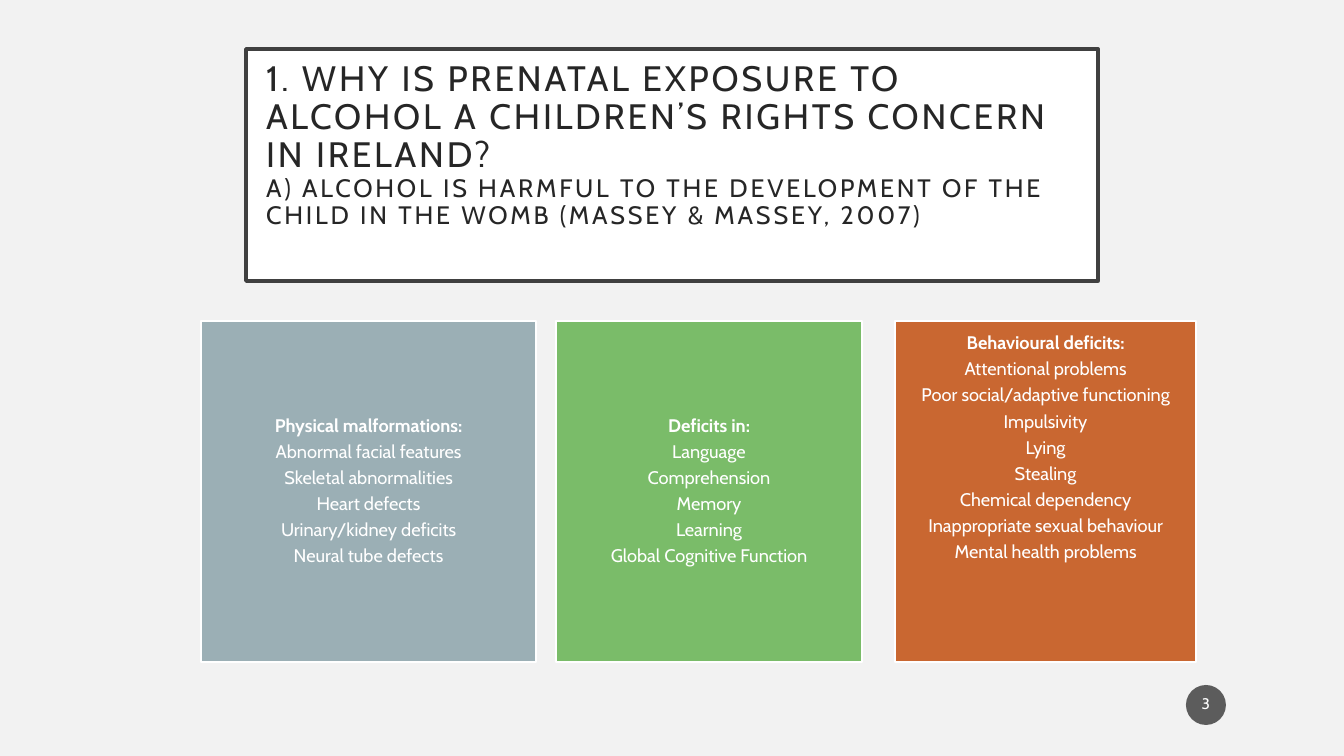
"""Build a slide on prenatal alcohol exposure as a children's rights concern."""
from dataclasses import dataclass

from lxml import etree
from pptx import Presentation
from pptx import util as u
from pptx.dml.color import RGBColor
from pptx.enum import shapes, text
from pptx.oxml import ns

PX = 12192000 / 1344


@dataclass(frozen=True)
class Theme:
    font: str = "Cabin"
    background: str = "F2F2F2"
    white: str = "FFFFFF"
    frame: str = "404040"
    heading: str = "262626"
    badge: str = "1D1D1D"
    title_size: float = 25.2
    subtitle_size: float = 18
    body_size: float = 13
    number_size: float = 11


def px(value):
    return u.Emu(round(value * PX))


def color(value):
    return RGBColor.from_string(value)


class SlideBuilder:
    def __init__(self, presentation, theme):
        self.theme = theme
        self.slide = presentation.slides.add_slide(presentation.slide_layouts[5])
        fill = self.slide.background.fill
        fill.solid()
        fill.fore_color.rgb = color(theme.background)

    def paint(self, shape, fill, line=None, width=1):
        shape.fill.solid()
        shape.fill.fore_color.rgb = color(fill)
        if line is None:
            shape.line.fill.background()
        else:
            shape.line.color.rgb = color(line)
            shape.line.width = u.Pt(width)

    def set_text(self, shape, lines, sizes, ink, align, anchor, insets, after=0):
        frame = shape.text_frame
        frame.text = "\n".join(lines)
        frame.word_wrap = True
        frame.auto_size = text.MSO_AUTO_SIZE.NONE
        frame.vertical_anchor = anchor
        side, top = insets
        frame.margin_left = frame.margin_right = px(side)
        frame.margin_top = frame.margin_bottom = px(top)
        for paragraph, size in zip(frame.paragraphs, sizes):
            paragraph.alignment = align
            paragraph.line_spacing = 0.9
            paragraph.space_before = u.Pt(0)
            paragraph.space_after = u.Pt(after)
            for run in paragraph.runs:
                run.font.name = self.theme.font
                run.font.size = u.Pt(size)
                run.font.color.rgb = color(ink)
        return frame

    def title(self, box, heading, subheading):
        theme = self.theme
        shape = self.slide.shapes.title
        shape.left, shape.top, shape.width, shape.height = map(px, box)
        self.paint(shape, theme.white, theme.frame, 2.5)
        frame = self.set_text(shape, [heading, subheading],
                              [theme.title_size, theme.subtitle_size], theme.heading,
                              text.PP_ALIGN.LEFT, text.MSO_ANCHOR.TOP, (20, 12))
        for paragraph in frame.paragraphs:
            for run in paragraph.runs:
                run._r.get_or_add_rPr().set("spc", "200")

    def shape(self, kind, box):
        shape = self.slide.shapes.add_shape(kind, *map(px, box))
        shape.shadow.inherit = False
        return shape

    def card(self, box, fill, lines, anchor, top):
        theme = self.theme
        shape = self.shape(shapes.MSO_SHAPE.RECTANGLE, box)
        self.paint(shape, fill, theme.white)
        frame = self.set_text(shape, lines, [theme.body_size] * len(lines), theme.white,
                              text.PP_ALIGN.CENTER, anchor, (5, top), after=4.55)
        frame.paragraphs[0].runs[0].font.bold = True

    def page_number(self, box, number):
        theme = self.theme
        shape = self.shape(shapes.MSO_SHAPE.OVAL, box)
        self.paint(shape, theme.badge)
        tint = shape._element.spPr.find(".//" + ns.qn("a:srgbClr"))
        etree.SubElement(tint, ns.qn("a:alpha"), val="70000")
        self.set_text(shape, [number], [theme.number_size], theme.white,
                      text.PP_ALIGN.CENTER, text.MSO_ANCHOR.MIDDLE, (2, 5))


def main():
    presentation = Presentation()
    presentation.slide_width, presentation.slide_height = px(1344), px(756)
    builder = SlideBuilder(presentation, Theme())
    builder.title(
        (246, 49, 852, 232),
        "1. WHY IS PRENATAL EXPOSURE TO ALCOHOL A CHILDREN’S RIGHTS CONCERN IN IRELAND?",
        "A) ALCOHOL IS HARMFUL TO THE DEVELOPMENT OF THE CHILD IN THE WOMB "
        "(MASSEY & MASSEY, 2007)",
    )
    middle, top = text.MSO_ANCHOR.MIDDLE, text.MSO_ANCHOR.TOP
    cards = [
        (201, 335, "9BAFB5", middle, 5, [
            "Physical malformations:", "Abnormal facial features",
            "Skeletal abnormalities", "Heart defects",
            "Urinary/kidney deficits", "Neural tube defects"]),
        (556, 306, "7ABC69", middle, 5, [
            "Deficits in:", "Language", "Comprehension", "Memory", "Learning",
            "Global Cognitive Function"]),
        (895, 301, "C96731", top, 13, [
            "Behavioural deficits:", "Attentional problems",
            "Poor social/adaptive functioning", "Impulsivity", "Lying", "Stealing",
            "Chemical dependency", "Inappropriate sexual behaviour",
            "Mental health problems"]),
    ]
    for left, width, fill, anchor, inset, lines in cards:
        builder.card((left, 321, width, 341), fill, lines, anchor, inset)
    builder.page_number((1186, 685, 40, 40), "3")
    presentation.save("out.pptx")


if __name__ == "__main__":
    main()
